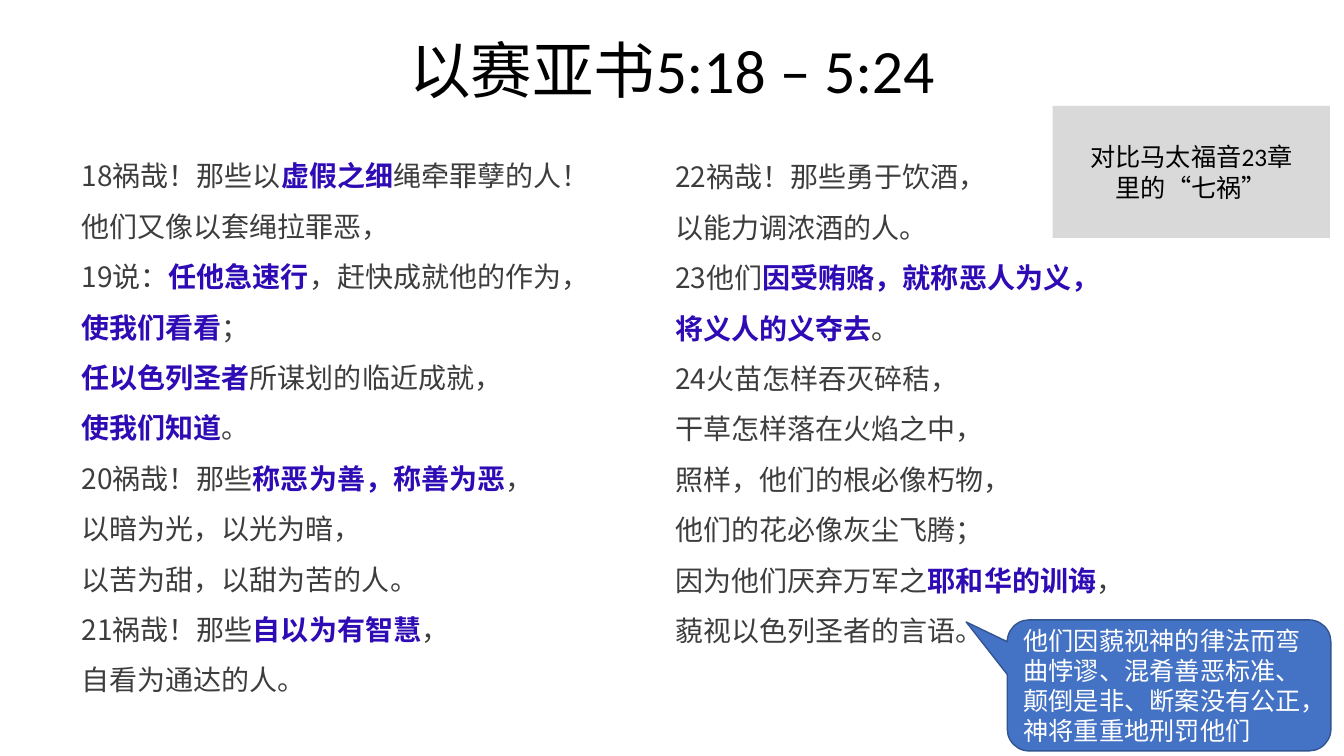
from lxml.etree import SubElement
from pptx import Presentation
from pptx.dml.color import RGBColor
from pptx.enum.shapes import MSO_SHAPE
from pptx.enum.text import MSO_ANCHOR, PP_ALIGN
from pptx.oxml.ns import qn
from pptx.util import Inches, Pt

BLACK = RGBColor(0x00, 0x00, 0x00)
WHITE = RGBColor(0xFF, 0xFF, 0xFF)
BODY_GRAY = RGBColor(0x3D, 0x3D, 0x3D)
EMPHASIS = RGBColor(0x2F, 0x0B, 0xB5)
NOTE_GRAY = RGBColor(0xD9, 0xD9, 0xD9)
CALLOUT_BLUE = RGBColor(0x44, 0x72, 0xC4)
CALLOUT_EDGE = RGBColor(0x32, 0x54, 0x91)

HEADING_FONT = "Calibri"
VERSE_FONT = "Noto Sans CJK SC"

LEFT_VERSES = [
    "18祸哉！那些以*虚假之细*绳牵罪孽的人！",
    "他们又像以套绳拉罪恶，",
    "19说：*任他急速行*，赶快成就他的作为，",
    "*使我们看看*；",
    "*任以色列圣者*所谋划的临近成就，",
    "*使我们知道*。",
    "20祸哉！那些*称恶为善，称善为恶*，",
    "以暗为光，以光为暗，",
    "以苦为甜，以甜为苦的人。",
    "21祸哉！那些*自以为有智慧*，",
    "自看为通达的人。",
]
RIGHT_VERSES = [
    "22祸哉！那些勇于饮酒，",
    "以能力调浓酒的人。",
    "23他们*因受贿赂，就称恶人为义，*",
    "*将义人的义夺去*。",
    "24火苗怎样吞灭碎秸，",
    "干草怎样落在火焰之中，",
    "照样，他们的根必像朽物，",
    "他们的花必像灰尘飞腾；",
    "因为他们厌弃万军之*耶和华的训诲*，",
    "藐视以色列圣者的言语。",
]


def write_lines(frame, lines, size, color, align):
    """Write plain lines in the heading font, centred vertically."""
    frame.word_wrap = True
    frame.vertical_anchor = MSO_ANCHOR.MIDDLE
    for number, line in enumerate(lines):
        para = frame.paragraphs[0] if number == 0 else frame.add_paragraph()
        para.text = line
        para.alignment = align
        para.font.name = HEADING_FONT
        para.font.size = Pt(size)
        para.font.color.rgb = color


def add_title(page, box, text):
    """Place the centred slide title."""
    frame = page.shapes.add_textbox(*map(Inches, box)).text_frame
    write_lines(frame, [text], 44, BLACK, PP_ALIGN.CENTER)
    frame.paragraphs[0].line_spacing = 0.9


def add_verses(page, box, verses):
    """Place a column of verses, with starred phrases emphasised."""
    frame = page.shapes.add_textbox(*map(Inches, box)).text_frame
    frame.word_wrap = True
    for number, verse in enumerate(verses):
        para = frame.paragraphs[0] if number == 0 else frame.add_paragraph()
        para.line_spacing = Pt(36)
        para.font.name = VERSE_FONT
        para.font.size = Pt(20)
        properties = para._p.get_or_add_pPr()
        properties.set("marL", str(Inches(0.75)))
        properties.set("indent", str(Inches(-0.25)))
        SubElement(properties.find(qn("a:defRPr")), qn("a:ea"), typeface=VERSE_FONT)
        for position, phrase in enumerate(verse.split("*")):
            if phrase:
                emphasised = position % 2 == 1
                span = para.add_run()
                span.text = phrase
                span.font.bold = emphasised
                span.font.color.rgb = EMPHASIS if emphasised else BODY_GRAY


def add_note(page, box, lines):
    """Place the gray comparison note."""
    note = page.shapes.add_shape(MSO_SHAPE.RECTANGLE, *map(Inches, box))
    note.shadow.inherit = False
    note.fill.solid()
    note.fill.fore_color.rgb = NOTE_GRAY
    note.line.fill.background()
    write_lines(note.text_frame, lines, 18, BLACK, PP_ALIGN.CENTER)


def add_callout(page, box, text):
    """Place the blue callout pointing at the last verse."""
    callout = page.shapes.add_shape(
        MSO_SHAPE.ROUNDED_RECTANGULAR_CALLOUT, *map(Inches, box))
    callout.shadow.inherit = False
    for index, value in enumerate((-0.627, -0.484, 0.167)):
        callout.adjustments[index] = value
    callout.fill.solid()
    callout.fill.fore_color.rgb = CALLOUT_BLUE
    callout.line.color.rgb = CALLOUT_EDGE
    callout.line.width = Pt(1)
    write_lines(callout.text_frame, [text], 18, WHITE, PP_ALIGN.LEFT)


def main():
    """Build the slide and save the deck."""
    deck = Presentation()
    deck.slide_width = Inches(13.33)
    deck.slide_height = Inches(7.5)
    page = deck.slides.add_slide(deck.slide_layouts[6])
    add_title(page, (0.14, 0, 13.05, 1.45), "以赛亚书5:18 – 5:24")
    add_verses(page, (0.21, 1.36, 5.76, 5.58), LEFT_VERSES)
    add_callout(page, (9.99, 6.15, 3.21, 1.3),
                "他们因藐视神的律法而弯曲悖谬、混肴善恶标准、"
                "颠倒是非、断案没有公正，神将重重地刑罚他们")
    add_verses(page, (6.1, 1.37, 5.19, 5.09), RIGHT_VERSES)
    add_note(page, (10.44, 1.05, 2.75, 1.31), ["对比马太福音23章", "里的“七祸”"])
    deck.save("out.pptx")


if __name__ == "__main__":
    main()
